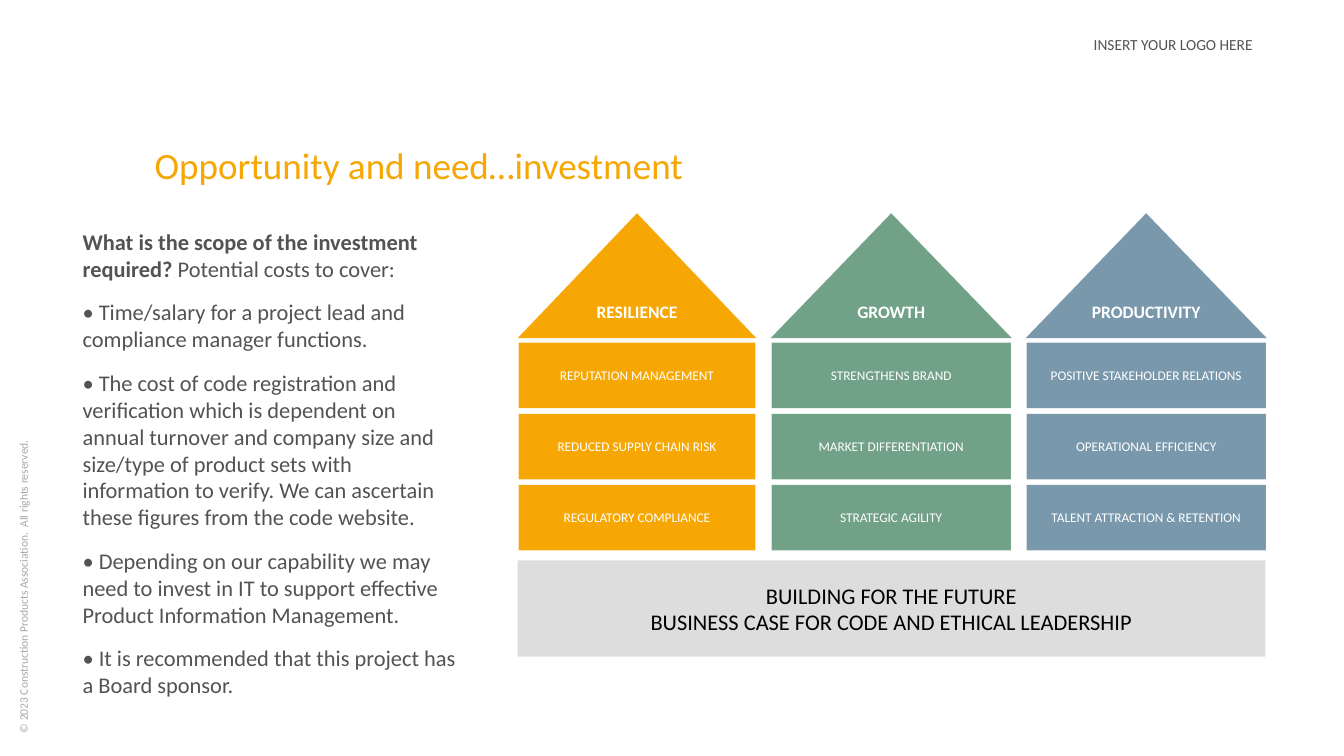
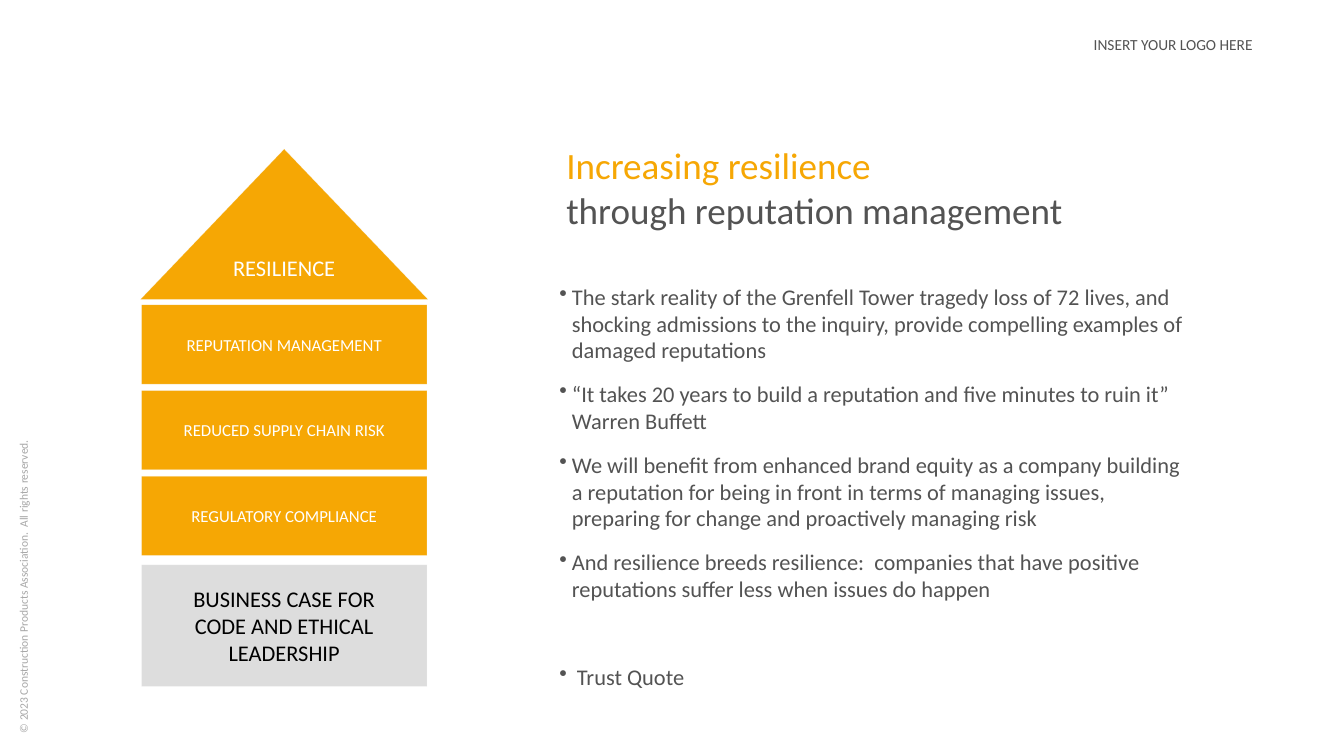
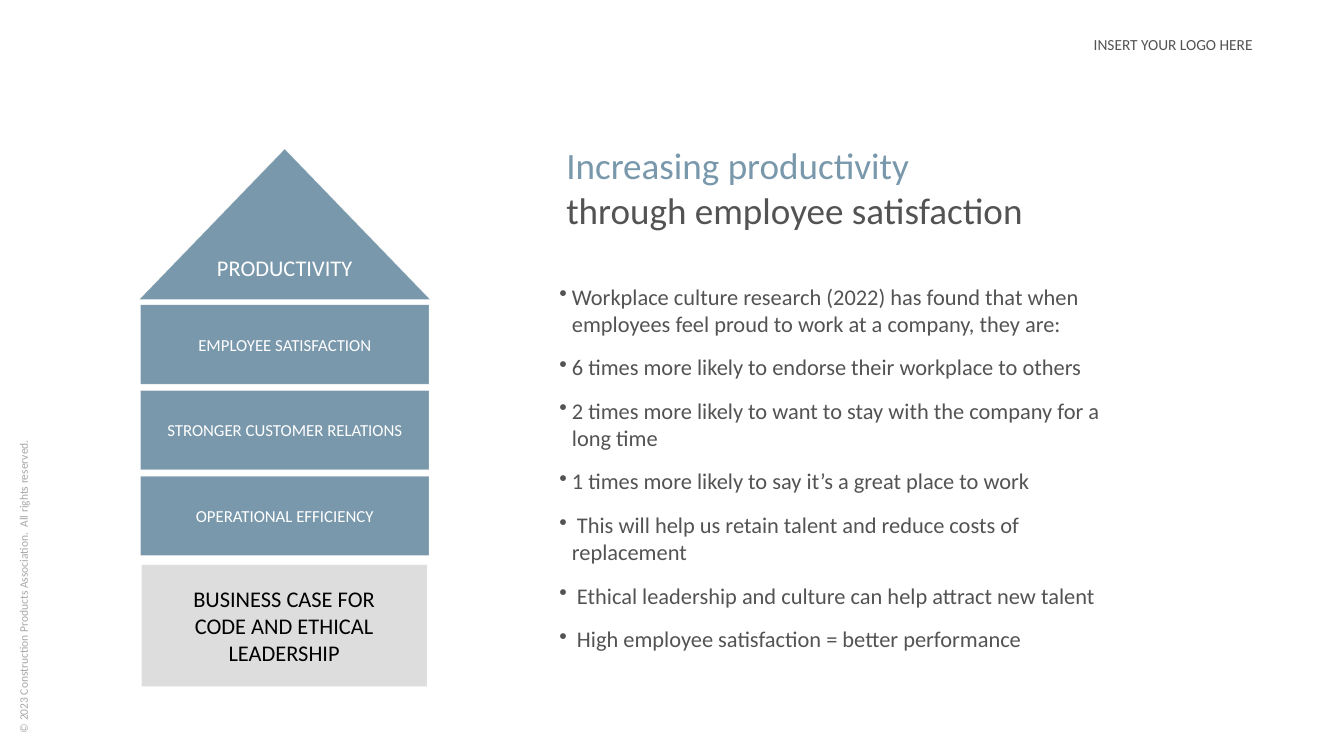
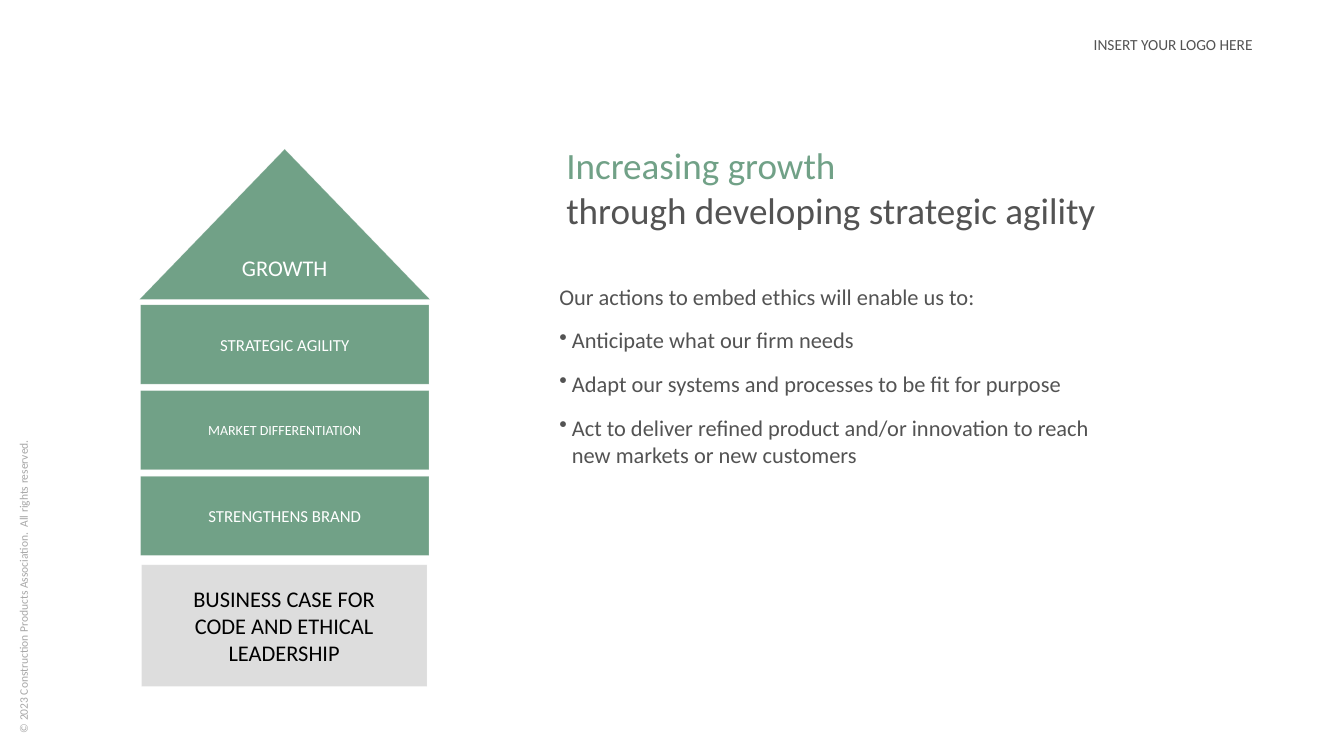
from dataclasses import dataclass
from pptx import Presentation
from pptx import util as u
from pptx.dml.color import RGBColor
from pptx.enum import shapes, text
from pptx.oxml import parse_xml
from pptx.oxml.ns import nsdecls, qn

# ---- Content ----
COPYRIGHT = "© 2023 Construction Products Association.  All rights reserved."
LOGO_NOTE = "INSERT YOUR LOGO HERE"

OVERVIEW = {
    "title": "Opportunity and need…investment",
    "lead": ("What is the scope of the investment required? ", "Potential costs to cover:"),
    "costs": [
        "• Time/salary for a project lead and compliance manager functions.",
        "• The cost of code registration and verification which is dependent on annual turnover "
        "and company size and size/type of product sets with information to verify. "
        "We can ascertain these figures from the code website.",
        "• Depending on our capability we may need to invest in IT to support effective "
        "Product Information Management.",
        "• It is recommended that this project has a Board sponsor.",
    ],
    "houses": [
        ("orange", "RESILIENCE",
         ["REPUTATION MANAGEMENT", "REDUCED SUPPLY CHAIN RISK", "REGULATORY COMPLIANCE"]),
        ("green", "GROWTH",
         ["STRENGTHENS BRAND", "MARKET DIFFERENTIATION", "STRATEGIC AGILITY"]),
        ("blue", "PRODUCTIVITY",
         ["POSITIVE STAKEHOLDER RELATIONS", "OPERATIONAL EFFICIENCY",
          "TALENT ATTRACTION & RETENTION"]),
    ],
    "base": ["BUILDING FOR THE FUTURE", "BUSINESS CASE FOR CODE AND ETHICAL LEADERSHIP"],
}

DETAIL_BASE = "BUSINESS CASE FOR\nCODE AND ETHICAL LEADERSHIP"
DETAILS = [
    {
        "title": ("Increasing resilience", "through reputation management"),
        "house": ("orange", "RESILIENCE",
                  ["REPUTATION MANAGEMENT", "REDUCED SUPPLY CHAIN RISK", "REGULATORY COMPLIANCE"]),
        "house_span": (2.81, 5.66),
        "body_size": (12.79, 8.03),
        "points": [
            "The stark reality of the Grenfell Tower tragedy loss of 72 lives, and shocking "
            "admissions to the inquiry, provide compelling examples of damaged reputations",
            "“It takes 20 years to build a reputation and five minutes to ruin it”\nWarren Buffett",
            "We will benefit from enhanced brand equity as a company building a reputation for "
            "being in front in terms of managing issues, preparing for change and proactively "
            "managing risk",
            "And resilience breeds resilience:  companies that have positive reputations suffer "
            "less when issues do happen",
        ],
        "closing": " Trust Quote",
    },
    {
        "title": ("Increasing productivity", "through employee satisfaction"),
        "house": ("blue", "PRODUCTIVITY",
                  ["EMPLOYEE SATISFACTION", "STRONGER CUSTOMER RELATIONS", "OPERATIONAL EFFICIENCY"]),
        "house_span": (2.79, 5.72),
        "body_size": (11.52, 6.82),
        "points": [
            "Workplace culture research (2022) has found that when employees feel proud to "
            "work at a company, they are:",
            "6 times more likely to endorse their workplace to others",
            "2 times more likely to want to stay with the company for a long time",
            "1 times more likely to say it’s a great place to work",
            " This will help us retain talent and reduce costs of replacement",
            " Ethical leadership and culture can help attract new talent",
            " High employee satisfaction = better performance",
        ],
    },
    {
        "title": ("Increasing growth", "through developing strategic agility"),
        "house": ("green", "GROWTH",
                  ["STRATEGIC AGILITY", ("MARKET DIFFERENTIATION", 20), "STRENGTHENS BRAND"]),
        "house_span": (2.79, 5.72),
        "body_size": (11.52, 3.78),
        "intro": "Our actions to embed ethics will enable us to:",
        "points": [
            "Anticipate what our firm needs",
            "Adapt our systems and processes to be fit for purpose",
            "Act to deliver refined product and/or innovation to reach new markets or new customers",
        ],
    },
]


# ---- Theme ----
@dataclass(frozen=True)
class Theme:
    width: float = 26.67
    height: float = 15
    font: str = "Calibri"
    orange: str = "F6A704"
    green: str = "71A187"
    blue: str = "7998AC"
    grey: str = "DDDDDD"
    edge: str = "F5F6F4"
    ink: str = "535353"
    faint: str = "A7A7A7"
    white: str = "FFFFFF"
    black: str = "000000"
    title: float = 53
    body: float = 32
    note: float = 22
    footer: float = 16.5
    gap: float = 24          # space between body paragraphs, points
    wide_gap: float = 87     # space before a closing point, points
    wide_inset: float = 0.1
    slim_inset: float = 0.05


THEME = Theme()


@dataclass(frozen=True)
class House:
    """Vertical rhythm and type sizes of a roof with blocks under it."""
    top: float
    roof: float
    first_block: float
    step: float
    block: float
    roof_size: float
    block_size: float
    bold: bool


SMALL_HOUSE = House(4.23, 2.48, 6.8, 1.41, 1.3, 25, 19, True)
LARGE_HOUSE = House(2.96, 2.98, 6.05, 1.7, 1.57, 32, 24, False)
SMALL_SPANS = [(10.29, 4.7), (15.31, 4.75), (20.37, 4.75)]


# ---- Helpers ----
def add_span(para, words, size, color, bold=False):
    for row, line in enumerate(words.split("\n")):
        if row:
            para.add_line_break()
        span = para.add_run()
        span.text = line
        span.font.name = THEME.font
        span.font.size = u.Pt(size)
        span.font.bold = bold
        span.font.color.rgb = RGBColor.from_string(color)


def add_box(page, left, top, width, height, inset, middle=False):
    box = page.shapes.add_textbox(*map(u.Inches, (left, top, width, height)))
    frame = box.text_frame
    frame.word_wrap = True
    frame.margin_left = frame.margin_right = u.Inches(inset)
    frame.margin_top = frame.margin_bottom = u.Inches(inset)
    frame.vertical_anchor = text.MSO_ANCHOR.MIDDLE if middle else text.MSO_ANCHOR.TOP
    return box


def next_para(box, gap=0):
    """The unused first paragraph, or a new one set off by a gap."""
    frame = box.text_frame
    para = frame.paragraphs[0]
    if para.runs:
        para = frame.add_paragraph()
        para.space_before = u.Pt(gap)
    return para


def add_label(page, center_x, center_y, width, height, lines, size, color, bold=False):
    box = add_box(page, center_x - width / 2, center_y - height / 2, width, height,
                  THEME.slim_inset, middle=True)
    for line in lines:
        para = next_para(box)
        para.alignment = text.PP_ALIGN.CENTER
        add_span(para, line, size, color, bold)


def add_block(page, kind, left, top, width, height, color):
    block = page.shapes.add_shape(kind, *map(u.Inches, (left, top, width, height)))
    block.shadow.inherit = False
    block.fill.solid()
    block.fill.fore_color.rgb = RGBColor.from_string(color)
    block.line.width = u.Pt(1)
    block.line.color.rgb = RGBColor.from_string(THEME.edge)
    edge = block.line._get_or_add_ln().find(".//" + qn("a:srgbClr"))
    edge.append(parse_xml(f'<a:alpha {nsdecls("a")} val="17000"/>'))


def add_bullet(para):
    props = para._p.get_or_add_pPr()
    props.set("marL", str(u.Inches(0.25)))
    props.set("indent", str(-u.Inches(0.25)))
    props.append(parse_xml(f'<a:buChar {nsdecls("a")} char="•"/>'))


# ---- Shared parts ----
def add_page(deck):
    page = deck.slides.add_slide(deck.slide_layouts[6])
    footer = add_box(page, -6.38, 7.58, 13.67, 0.46, THEME.wide_inset)
    footer.rotation = 270
    add_span(next_para(footer), COPYRIGHT, THEME.footer, THEME.faint)
    logo = add_box(page, 20.56, 0.64, 5.44, 0.91, THEME.slim_inset)
    para = next_para(logo)
    para.alignment = text.PP_ALIGN.CENTER
    add_span(para, LOGO_NOTE, THEME.note, THEME.ink)
    return page


def add_title(page, left, width, height, first, color, second=None):
    box = add_box(page, left, 2.73, width, height, THEME.wide_inset)
    para = next_para(box)
    add_span(para, first, THEME.title, color)
    if second:
        para.add_line_break()
        add_span(para, second, THEME.title, THEME.ink)


def add_house(page, house, span, content):
    left, width = span
    color_name, roof_label, blocks = content
    color = getattr(THEME, color_name)
    center = left + width / 2
    eave = 0.02
    add_block(page, shapes.MSO_SHAPE.ISOSCELES_TRIANGLE, left - eave, house.top,
              width + 2 * eave, house.roof, color)
    add_label(page, center, house.top + 0.786 * house.roof, width / 2, 0.215 * house.roof,
              [roof_label], house.roof_size, THEME.white, house.bold)
    for row, entry in enumerate(blocks):
        label, size = entry if isinstance(entry, tuple) else (entry, house.block_size)
        top = house.first_block + row * house.step
        add_block(page, shapes.MSO_SHAPE.RECTANGLE, left, top, width, house.block, color)
        add_label(page, center, top + house.block / 2, width, 0.74 * house.block,
                  [label], size, THEME.white)


def add_base(page, left, top, width, height, lines, label_height):
    add_block(page, shapes.MSO_SHAPE.RECTANGLE, left, top, width, height, THEME.grey)
    add_label(page, left + width / 2, top + height / 2, width, label_height,
              lines, THEME.body, THEME.black)


# ---- Slides ----
def build_overview(deck):
    page = add_page(deck)
    add_title(page, 2.97, 17.9, 1.07, OVERVIEW["title"], THEME.orange)
    body = add_box(page, 1.54, 4.42, 7.63, 9.63, THEME.wide_inset)
    question, answer = OVERVIEW["lead"]
    para = next_para(body)
    add_span(para, question, THEME.body, THEME.ink, bold=True)
    add_span(para, answer, THEME.body, THEME.ink)
    for cost in OVERVIEW["costs"]:
        add_span(next_para(body, THEME.gap), cost, THEME.body, THEME.ink)
    for span, content in zip(SMALL_SPANS, OVERVIEW["houses"]):
        add_house(page, SMALL_HOUSE, span, content)
    add_base(page, 10.27, 11.12, 14.84, 1.91, OVERVIEW["base"], 1.05)


def build_detail(deck, detail):
    page = add_page(deck)
    first, second = detail["title"]
    add_title(page, 11.14, 13.73, 1.92, first, getattr(THEME, detail["house"][0]), second)
    body = add_box(page, 11, 5.51, *detail["body_size"], THEME.wide_inset)
    if "intro" in detail:
        add_span(next_para(body), detail["intro"], THEME.body, THEME.ink)
    points = [(point, THEME.gap) for point in detail["points"]]
    if "closing" in detail:
        points.append((detail["closing"], THEME.wide_gap))
    for point, gap in points:
        para = next_para(body, gap)
        add_bullet(para)
        add_span(para, point, THEME.body, THEME.ink)
    add_house(page, LARGE_HOUSE, detail["house_span"], detail["house"])
    add_base(page, 2.81, 11.21, 5.66, 2.41, [DETAIL_BASE], 2.32)


def main():
    deck = Presentation()
    deck.slide_width, deck.slide_height = u.Inches(THEME.width), u.Inches(THEME.height)
    build_overview(deck)
    for detail in DETAILS:
        build_detail(deck, detail)
    deck.save("out.pptx")


if __name__ == "__main__":
    main()
